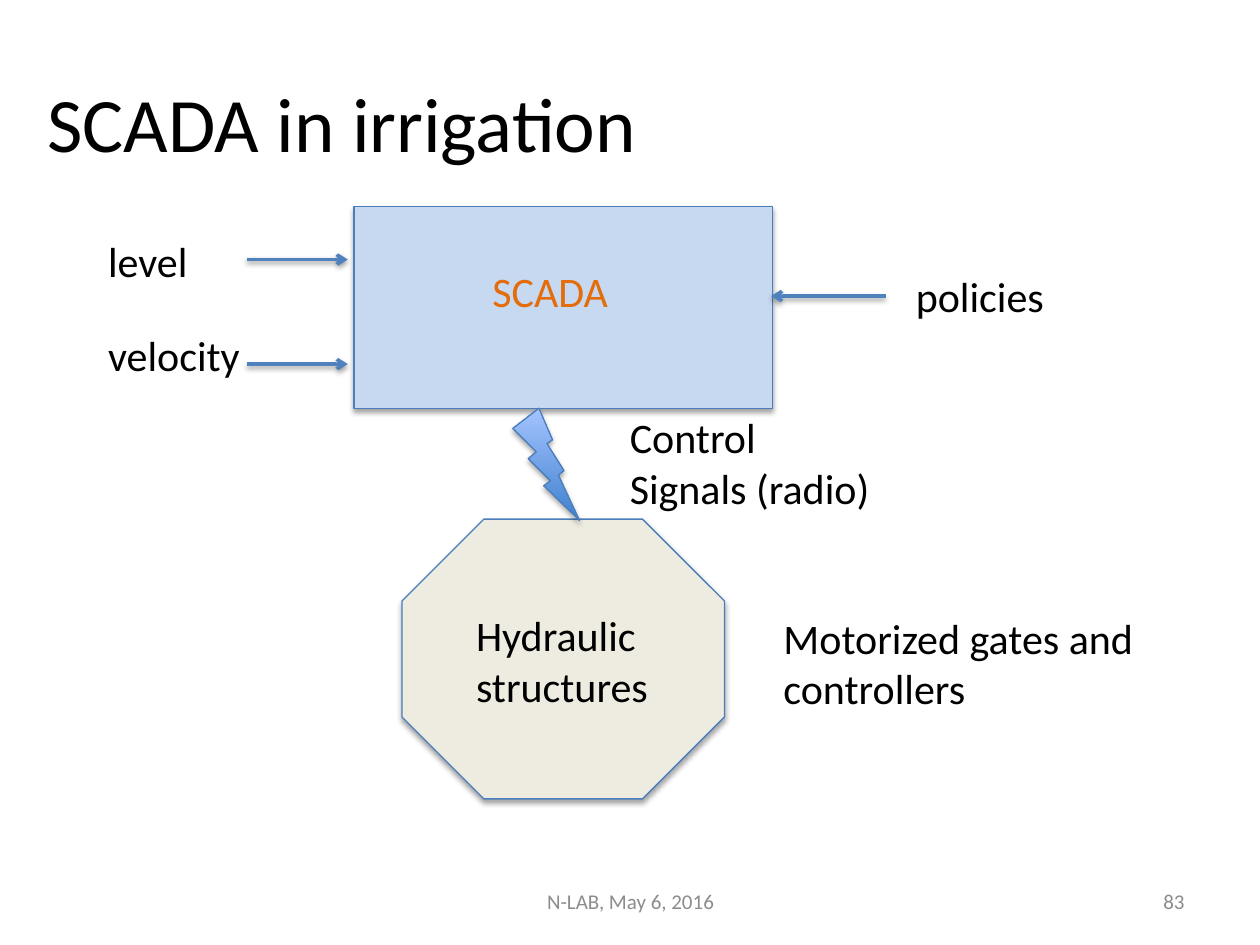
from lxml.etree import SubElement
from pptx import Presentation
from pptx.dml.color import RGBColor
from pptx.enum.shapes import MSO_CONNECTOR as Connector, MSO_SHAPE as Preset
from pptx.enum.text import MSO_ANCHOR as Anchor, PP_ALIGN as Align
from pptx.oxml.ns import qn
from pptx.util import Inches, Pt


def colour(code):
    return RGBColor.from_string(code)


class SlideBuilder:
    font = "Calibri"
    ink = "000000"
    outline = "4B7EBC"
    arrow_colour = "4F81BD"

    def __init__(self, page):
        self.page = page

    def text(self, lines, left, top, width, height, size=24, ink=ink,
             align=Align.LEFT, anchor=Anchor.TOP, wrap=False):
        box = self.page.shapes.add_textbox(
            Inches(left), Inches(top), Inches(width), Inches(height))
        frame = box.text_frame
        frame.word_wrap = wrap
        frame.vertical_anchor = anchor
        for index, line in enumerate(lines):
            para = frame.add_paragraph() if index else frame.paragraphs[0]
            para.alignment = align
            span = para.add_run()
            span.text = line
            span.font.name = self.font
            span.font.size = Pt(size)
            span.font.color.rgb = colour(ink)

    def footer(self, line, left, width, align):
        self.text([line], left, 6.95, width, 0.4, 12, "8C8C8C",
                  align, Anchor.MIDDLE, True)

    def shadow(self, item, opacity, distance):
        properties = item._element.spPr
        effects = properties.find(qn("a:effectLst"))
        if effects is None:
            effects = SubElement(properties, qn("a:effectLst"))
        outer = SubElement(effects, qn("a:outerShdw"), blurRad=str(Pt(3.1)),
                           dist=str(Pt(distance)), dir="5400000", rotWithShape="0")
        shade = SubElement(outer, qn("a:srgbClr"), val="000000")
        SubElement(shade, qn("a:alpha"), val=str(opacity * 1000))

    def shape(self, preset, left, top, width, height, *fills):
        shape = self.page.shapes.add_shape(
            preset, Inches(left), Inches(top), Inches(width), Inches(height))
        if len(fills) == 1:
            shape.fill.solid()
            shape.fill.fore_color.rgb = colour(fills[0])
        else:
            shape.fill.gradient()
            shape.fill.gradient_angle = 90
            for stop, code in zip(shape.fill.gradient_stops, fills):
                stop.color.rgb = colour(code)
        shape.line.color.rgb = colour(self.outline)
        shape.line.width = Pt(0.75)
        shape.shadow.inherit = False
        self.shadow(shape, 35, 1.8)

    def arrow(self, start, end, height):
        arrow = self.page.shapes.add_connector(
            Connector.STRAIGHT, Inches(start), Inches(height),
            Inches(end), Inches(height))
        arrow.line.color.rgb = colour(self.arrow_colour)
        arrow.line.width = Pt(2)
        SubElement(arrow.line._get_or_add_ln(), qn("a:tailEnd"), type="arrow")
        self.shadow(arrow, 38, 1.6)


def main():
    deck = Presentation()
    deck.slide_width = Inches(10)
    deck.slide_height = Inches(7.5)
    slide = SlideBuilder(deck.slides.add_slide(deck.slide_layouts[6]))

    slide.text(["SCADA in irrigation"], 0.28, 0.34, 9, 1.25, 44,
               anchor=Anchor.MIDDLE, wrap=True)

    slide.shape(Preset.RECTANGLE, 2.81, 1.64, 3.32, 1.6, "C6D9F1")
    slide.text(["SCADA"], 3.81, 2.06, 1.13, 0.5, ink="E46C0A")

    for name, top, width, arrow_height in (("level", 1.82, 0.84, 2.06),
                                           ("velocity", 2.57, 1.27, 2.89)):
        slide.text([name], 0.76, top, width, 0.5)
        slide.arrow(1.96, 2.76, arrow_height)
    slide.text(["policies"], 7.17, 2.1, 1.23, 0.5)
    slide.arrow(7.03, 6.12, 2.35)

    slide.shape(Preset.OCTAGON, 3.19, 4.12, 2.56, 2.22, "EEECE1")
    slide.text(["Hydraulic", "structures"], 3.68, 4.79, 1.59, 0.91)
    slide.text(["Control", "Signals (radio)"], 4.9, 3.22, 2.13, 0.91)
    slide.text(["Motorized gates and", "controllers"], 6.12, 4.81, 3.03, 0.91)
    slide.shape(Preset.LIGHTNING_BOLT, 4.07, 3.24, 0.53, 0.89, "3F80CE", "A4C4FF")

    slide.footer("N-LAB, May 6, 2016", 3.42, 3.17, Align.CENTER)
    slide.footer("83", 7.17, 2.33, Align.RIGHT)

    deck.save("out.pptx")


if __name__ == "__main__":
    main()
